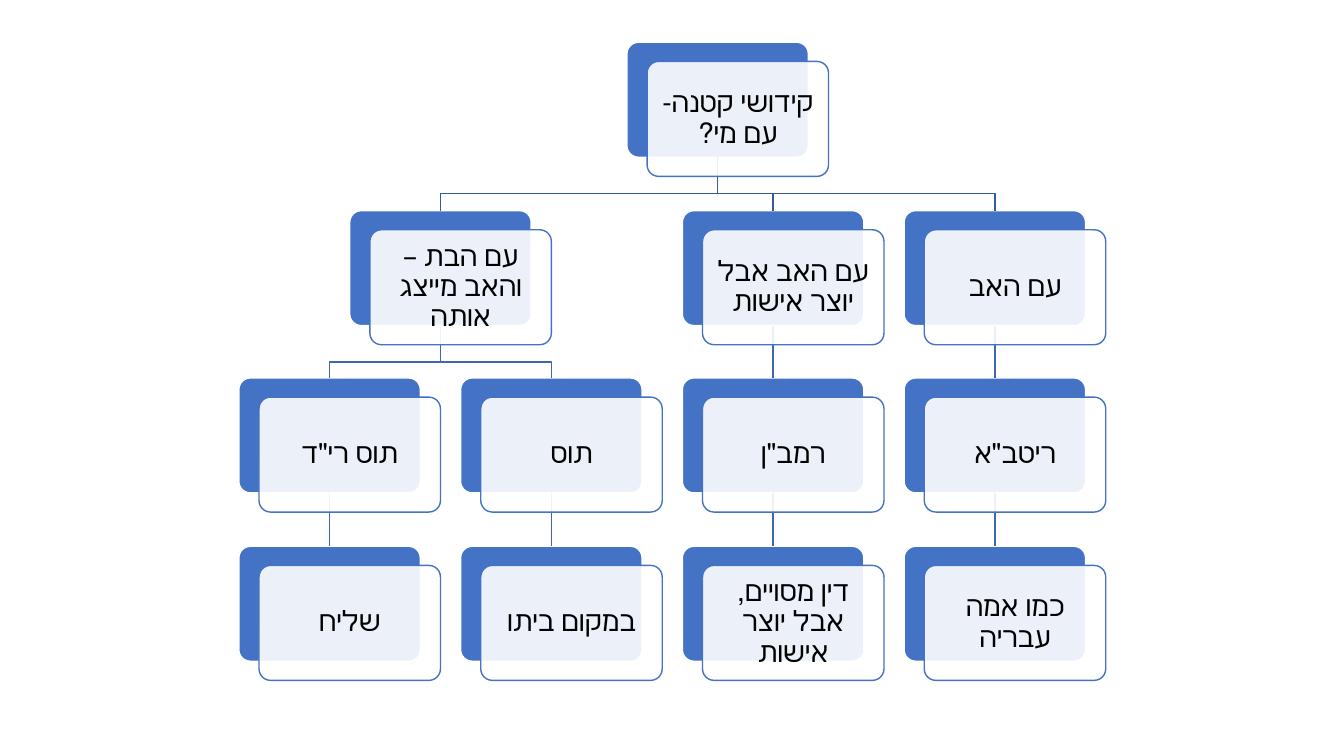
from collections.abc import Iterator
from dataclasses import dataclass, field
from itertools import count

import pptx
import pptx.dml.color
import pptx.enum.shapes
import pptx.enum.text
import pptx.oxml
import pptx.oxml.ns
import pptx.shapes.autoshape
import pptx.shapes.shapetree
import pptx.util

RGBColor = pptx.dml.color.RGBColor
BLUE = RGBColor(0x44, 0x72, 0xC4)
TOP_LINK = RGBColor(0x36, 0x5B, 0x9D)
LOW_LINK = RGBColor(0x3E, 0x67, 0xB2)
WHITE = RGBColor(0xFF, 0xFF, 0xFF)
BLACK = RGBColor(0, 0, 0)

PX = 9144  # 100 px to the inch
WIDE = pptx.util.Emu(12192000)  # 16:9 at 7.5 inches high
CARD_W, CARD_H = 180, 114
LEFT, TOP = 237, 42
HALF_COL, THREE_ROWS = 110, 500
SHIFT_X, SHIFT_Y = 20, 19
BEND = 36
INSET = 8


@dataclass
class Node:
    text: str
    kids: list["Node"] = field(default_factory=list)
    col: float = 0
    row: int = 0
    card: pptx.shapes.autoshape.Shape | None = None

    @property
    def left(self) -> int:
        return LEFT + int(self.col * HALF_COL)

    @property
    def top(self) -> int:
        return TOP + round(self.row * THREE_ROWS / 3)

    @property
    def mid(self) -> int:
        return self.left + CARD_W // 2


# Kids run from right to left, as the text does.
TREE = Node("קידושי קטנה- עם מי?", [
    Node("עם האב", [Node('ריטב"א', [Node("כמו אמה עבריה")])]),
    Node("עם האב אבל יוצר אישות", [
        Node('רמב"ן', [Node("דין מסויים, אבל יוצר אישות")]),
    ]),
    Node("עם הבת – והאב מייצג אותה", [
        Node("תוס", [Node("במקום ביתו")]),
        Node('תוס רי"ד', [Node("שליח")]),
    ]),
])


def place(node: Node, row: int, slots: Iterator[int]) -> None:
    """Give each leaf the next column and centre each parent over its kids."""
    node.row = row
    for kid in node.kids:
        place(kid, row + 1, slots)
    if node.kids:
        node.col = (node.kids[0].col + node.kids[-1].col) / 2
    else:
        node.col = next(slots)


def walk(node: Node) -> Iterator[Node]:
    yield node
    for kid in node.kids:
        yield from walk(kid)


def add_card(shapes: pptx.shapes.shapetree.SlideShapes, left: int, top: int,
             fill: RGBColor, line: RGBColor) -> pptx.shapes.autoshape.Shape:
    card = shapes.add_shape(
        pptx.enum.shapes.MSO_SHAPE.ROUNDED_RECTANGLE,
        left * PX, top * PX, CARD_W * PX, CARD_H * PX)
    card.adjustments[0] = 0.1
    card.shadow.inherit = False
    card.fill.solid()
    card.fill.fore_color.rgb = fill
    card.line.color.rgb = line
    card.line.width = pptx.util.Pt(1)
    return card


def add_front(shapes: pptx.shapes.shapetree.SlideShapes, node: Node) -> None:
    """Add the see-through card that holds the text of the node."""
    card = add_card(shapes, node.left + SHIFT_X, node.top + SHIFT_Y, WHITE, BLUE)
    tint = card.fill._xPr.find(".//" + pptx.oxml.ns.qn("a:srgbClr"))
    tint.append(pptx.oxml.parse_xml(
        f'<a:alpha {pptx.oxml.ns.nsdecls("a")} val="90000"/>'))

    frame = card.text_frame
    frame.text = node.text
    frame.word_wrap = True
    frame.vertical_anchor = pptx.enum.text.MSO_ANCHOR.MIDDLE
    frame.margin_left = frame.margin_right = INSET * PX
    frame.margin_top = frame.margin_bottom = INSET * PX
    para = frame.paragraphs[0]
    para.alignment = pptx.enum.text.PP_ALIGN.CENTER
    para.line_spacing = 0.9
    para.space_after = pptx.util.Pt(7)
    para._p.get_or_add_pPr().set("rtl", "1")
    font = para.runs[0].font
    font.size = pptx.util.Pt(20)
    font.name = "Calibri"
    font.color.rgb = BLACK


def add_link(shapes: pptx.shapes.shapetree.SlideShapes,
             node: Node, kid: Node) -> None:
    """Join a node to its kid: straight in one column, bent otherwise."""
    start = node.top + CARD_H
    if node.mid == kid.mid:
        link = shapes.add_connector(
            pptx.enum.shapes.MSO_CONNECTOR.STRAIGHT,
            node.mid * PX, start * PX, kid.mid * PX, kid.top * PX)
        link.begin_connect(node.card, 2)
        link.end_connect(kid.card, 0)
        link._element.spPr.append(pptx.oxml.parse_xml(
            f'<a:effectLst {pptx.oxml.ns.nsdecls("a")}/>'))
    else:
        bend = start + BEND
        build = shapes.build_freeform(node.mid, start, scale=PX)
        build.add_line_segments(
            [(node.mid, bend), (kid.mid, bend), (kid.mid, kid.top)], close=False)
        link = build.convert_to_shape()
        link.fill.background()
        link.shadow.inherit = False
    link.line.color.rgb = LOW_LINK if node.row else TOP_LINK
    link.line.width = pptx.util.Pt(1)


def main() -> None:
    deck = pptx.Presentation()
    deck.slide_width, deck.slide_height = WIDE, 750 * PX
    shapes = deck.slides.add_slide(deck.slide_layouts[6]).shapes

    place(TREE, 0, count(6, -2))
    nodes = list(walk(TREE))
    for node in nodes:
        node.card = add_card(shapes, node.left, node.top, BLUE, WHITE)
    for node in nodes:
        for kid in node.kids:
            add_link(shapes, node, kid)
    for node in nodes:
        add_front(shapes, node)
    deck.save("out.pptx")


if __name__ == "__main__":
    main()
